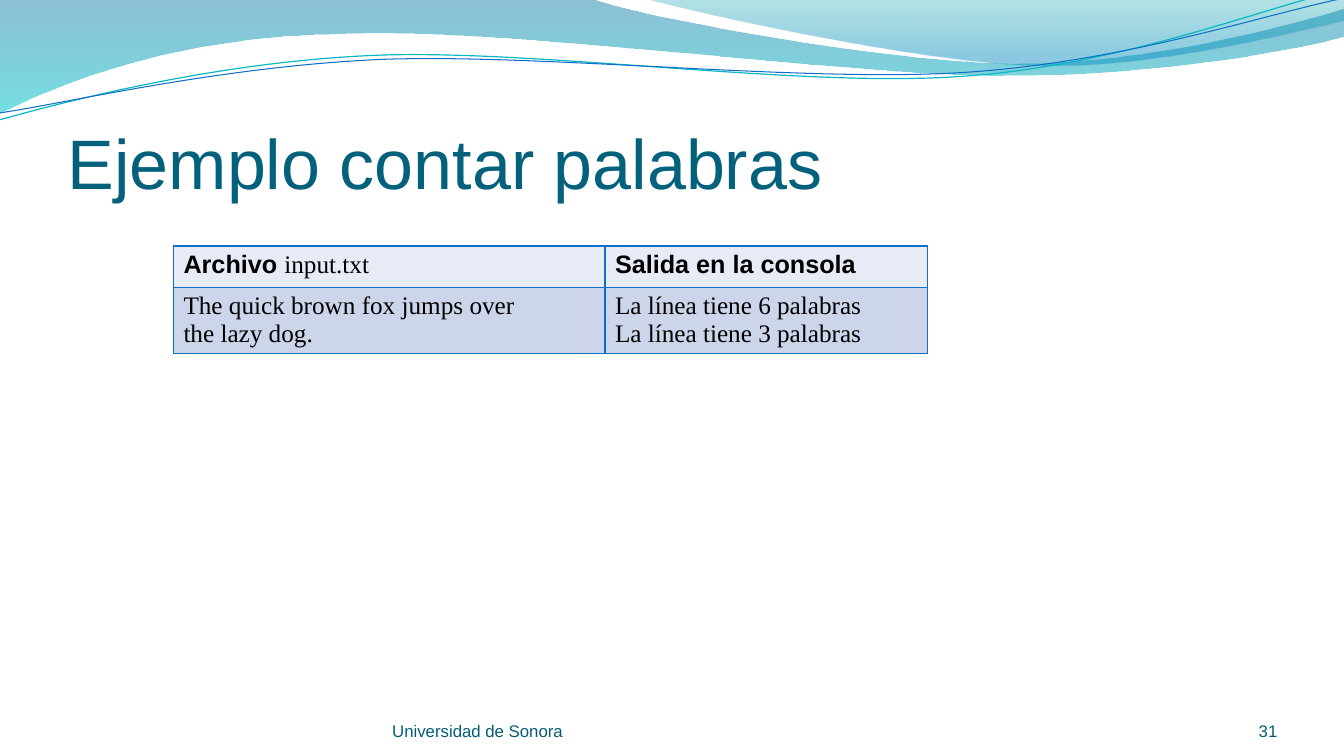
from dataclasses import dataclass

from lxml.etree import SubElement
from pptx import Presentation
from pptx.dml.color import RGBColor
from pptx.enum.text import MSO_ANCHOR as Anchor, MSO_AUTO_SIZE as AutoSize, PP_ALIGN as Align
from pptx.oxml.ns import qn
from pptx.util import Inches, Pt

COLORS = {
    "title": "04617B", "footer": "045D75", "text": "000000",
    "header": "E7EBF5", "body": "CCD5EA", "border": "0F6FC6",
    "teal_line": "0AB8BF", "blue_line": "0F6FC6",
    "deep_blue": "0074A1", "cyan": "00C6CF", "teal": "00A1A9", "sky": "008BBF",
}
SANS, SERIF = "Arial", "Times New Roman"


@dataclass
class Stop:
    position: float
    color: str
    opacity: int


@dataclass
class Wave:
    """Each segment holds one end point (line) or three points (cubic curve)."""
    start: tuple[float, float]
    segments: list[tuple[float, ...]]
    stops: tuple[Stop, ...] = ()
    line: str = ""
    width: float = 0


@dataclass
class Footer:
    text: str
    left: float
    width: float
    align: Align


@dataclass
class Span:
    text: str
    font: str = SERIF
    bold: bool = False


WAVES = [
    Wave((0, 0), [
        (5.87, -0.01),
        (6.34, 0.17, 8.85, 0.63, 10.11, 0.63),
        (11.38, 0.63, 12.78, 0.26, 13.33, 0.09),
        (13.35, 0.36),
        (13.11, 0.44, 11.6, 0.76, 9.94, 0.75),
        (8.29, 0.75, 5.09, 0.28, 3.43, 0.34),
        (1.72, 0.36, 0.61, 0.83, -0.01, 1.13),
    ], stops=(Stop(0, "deep_blue", 45), Stop(1, "cyan", 55))),
    Wave((6.39, -0.01), [
        (6.79, 0.11, 9.09, 0.62, 10.25, 0.65),
        (11.41, 0.69, 12.82, 0.32, 13.33, 0.21),
        (13.33, 0),
    ], stops=(Stop(0, "teal", 30), Stop(0.8, "sky", 45))),
    Wave((-0.01, 1.19), [
        (0.64, 1.01, 2.11, 0.62, 3.69, 0.55),
        (5.27, 0.48, 7.9, 0.87, 9.5, 0.76),
        (11.1, 0.66, 12.52, 0.08, 13.31, -0.1),
    ], line="teal_line", width=0.85),
    Wave((0, 1.12), [
        (0.63, 1.03, 2.18, 0.66, 3.78, 0.59),
        (5.37, 0.53, 7.96, 0.82, 9.55, 0.72),
        (11.15, 0.62, 12.55, 0.14, 13.34, -0.02),
    ], line="blue_line", width=0.75),
]
FOOTERS = [
    Footer("Universidad de Sonora", 3.89, 4.89, Align.LEFT),
    Footer("31", 11.56, 1.11, Align.RIGHT),
]
# Rows of cells, each cell a list of paragraphs made of spans
TABLE = [
    [[[Span("Archivo ", SANS, True), Span("input.txt")]],
     [[Span("Salida en la consola", SANS, True)]]],
    [[[Span("The quick brown fox jumps over")], [Span("the lazy dog.")]],
     [[Span("La línea tiene 6 palabras")], [Span("La línea tiene 3 palabras")]]],
]
COLUMN_WIDTHS = (4.28, 3.2)
ROW_HEIGHT = 0.41


def rgb(name: str) -> RGBColor:
    return RGBColor.from_string(COLORS[name])


def style(font, name: str, size: float, color: str, bold: bool = False) -> None:
    font.name, font.size, font.bold = name, Pt(size), bold
    font.color.rgb = rgb(color)


def bend_segments(shape, segments: list[tuple[float, ...]]) -> None:
    """Join the three straight steps of each curved segment into one cubic."""
    steps = iter(list(shape.element.spPr.iter(qn("a:lnTo"))))
    for segment in segments:
        first, *others = [next(steps) for _ in range(len(segment) // 2)]
        if others:
            first.tag = qn("a:cubicBezTo")
        for step in others:
            first.append(step[0])
            step.getparent().remove(step)


def draw_wave(slide, wave: Wave) -> None:
    points = [wave.start]
    for segment in wave.segments:
        points += zip(segment[::2], segment[1::2])
    corners = [(Inches(x), Inches(y)) for x, y in points]
    builder = slide.shapes.build_freeform(*corners[0])
    builder.add_line_segments(corners[1:], close=False)
    shape = builder.convert_to_shape()
    bend_segments(shape, wave.segments)
    shape.shadow.inherit = False
    if wave.line:
        shape.fill.background()
        shape.line.color.rgb = rgb(wave.line)
        shape.line.width = Pt(wave.width)
        return
    SubElement(next(shape.element.spPr.iter(qn("a:path"))), qn("a:close"))
    shape.line.fill.background()
    shape.fill.gradient()
    shape.fill.gradient_angle = 270
    for target, stop in zip(shape.fill.gradient_stops, wave.stops):
        target.position = stop.position
        target.color.rgb = rgb(stop.color)
    for color, stop in zip(shape.element.spPr.iter(qn("a:srgbClr")), wave.stops):
        SubElement(color, qn("a:alpha")).set("val", str(stop.opacity * 1000))


def fill_text(box, text: str, align: Align, size: float, color: str, top: float) -> None:
    frame = box.text_frame
    frame.text = text
    frame.word_wrap, frame.auto_size = True, AutoSize.NONE
    frame.vertical_anchor = Anchor.BOTTOM
    frame.margin_left = frame.margin_right = frame.margin_bottom = 0
    frame.margin_top = Inches(top)
    para = frame.paragraphs[0]
    para.alignment = align
    style(para.runs[0].font, SANS, size, color)


def format_cell(cell, paragraphs: list[list[Span]], fill: str) -> None:
    frame = cell.text_frame
    for index, spans in enumerate(paragraphs):
        para = frame.add_paragraph() if index else frame.paragraphs[0]
        for span in spans:
            run = para.add_run()
            run.text = span.text
            style(run.font, span.font, 18, "text", span.bold)
    properties = cell._tc.get_or_add_tcPr()
    for side in ("lnL", "lnR", "lnT", "lnB"):
        border = SubElement(properties, qn(f"a:{side}"), w=str(Pt(1)))
        solid = SubElement(border, qn("a:solidFill"))
        SubElement(solid, qn("a:srgbClr"), val=COLORS["border"])
    cell.fill.solid()
    cell.fill.fore_color.rgb = rgb(fill)


def draw_table(slide) -> None:
    frame = slide.shapes.add_table(
        len(TABLE), len(COLUMN_WIDTHS), Inches(1.72), Inches(2.44),
        Inches(sum(COLUMN_WIDTHS)), Inches(1.11))
    for column, width in zip(frame.table.columns, COLUMN_WIDTHS):
        column.width = Inches(width)
    for row, contents, fill in zip(frame.table.rows, TABLE, ("header", "body")):
        row.height = Inches(ROW_HEIGHT)
        for cell, paragraphs in zip(row.cells, contents):
            format_cell(cell, paragraphs, fill)
    frame.height = Inches(1.11)


def main() -> None:
    deck = Presentation()
    deck.slide_width, deck.slide_height = Inches(13.33), Inches(7.5)
    slide = deck.slides.add_slide(deck.slide_layouts[5])

    # Wave decoration
    for wave in WAVES:
        draw_wave(slide, wave)

    # Title
    title = slide.shapes.title
    title.left, title.top = Inches(0.67), Inches(0.77)
    title.width, title.height = Inches(12), Inches(1.25)
    fill_text(title, "Ejemplo contar palabras", Align.LEFT, 50, "title", 0.05)

    # Footer and page number
    for footer in FOOTERS:
        box = slide.shapes.add_textbox(
            Inches(footer.left), Inches(6.95), Inches(footer.width), Inches(0.4))
        fill_text(box, footer.text, footer.align, 12, "footer", 0)

    # Input and output table
    draw_table(slide)
    deck.save("out.pptx")


if __name__ == "__main__":
    main()
